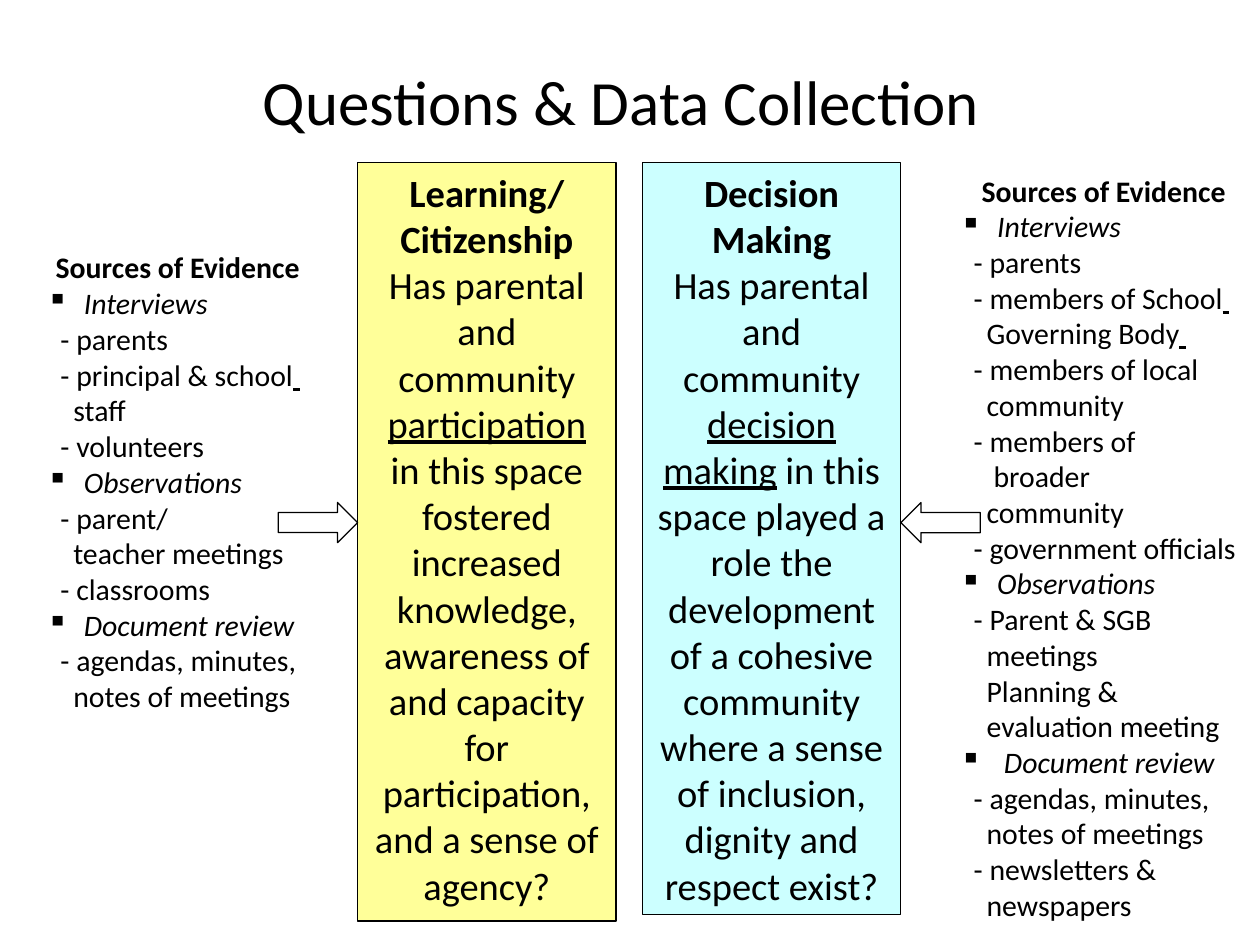
from collections import namedtuple

from lxml.etree import SubElement
from pptx import Presentation
from pptx.dml.color import RGBColor
from pptx.enum.shapes import MSO_SHAPE
from pptx.enum.text import MSO_ANCHOR, PP_ALIGN
from pptx.oxml.ns import qn
from pptx.util import Cm, Pt

BLACK = RGBColor(0, 0, 0)
YELLOW = RGBColor(0xFF, 0xFF, 0x99)
CYAN = RGBColor(0xCC, 0xFF, 0xFF)
FONT = "Calibri"

Box = namedtuple("Box", "left top width height")

ARROW_WIDTH, ARROW_HEIGHT, ARROW_DROP = 1.6, 0.81, 6.85
BULLET, WIDE_BULLET, DASH, MORE, DEEP = range(5)
INDENTS = {BULLET: 0.75, WIDE_BULLET: 0.89, DASH: 0.28, MORE: 0.54, DEEP: 0.68}

SCHOOL_SOURCES = [
    (BULLET, "Interviews"),
    (DASH, "- parents"),
    (DASH, "- principal & school", " "),
    (MORE, "staff"),
    (DASH, "- volunteers"),
    (BULLET, "Observations"),
    (DASH, "- parent/"),
    (MORE, "teacher meetings"),
    (DASH, "- classrooms"),
    (BULLET, "Document review"),
    (DASH, "- agendas, minutes,"),
    (MORE, "notes of meetings"),
]
GOVERNING_SOURCES = [
    (BULLET, "Interviews"),
    (DASH, "- parents"),
    (DASH, "- members of School", " "),
    (MORE, "Governing Body", " "),
    (DASH, "- members of local"),
    (MORE, "community"),
    (DASH, "- members of"),
    (DEEP, "broader"),
    (MORE, "community"),
    (DASH, "- government officials"),
    (BULLET, "Observations"),
    (DASH, "- Parent & SGB"),
    (MORE, "meetings"),
    (MORE, "Planning &"),
    (MORE, "evaluation meeting"),
    (WIDE_BULLET, "Document review"),
    (DASH, "- agendas, minutes,"),
    (MORE, "notes of meetings"),
    (DASH, "- newsletters &"),
    (MORE, "newspapers"),
]


def in_cm(box):
    return [Cm(value) for value in box]


def style(para, size, bold=False, italic=False, align=PP_ALIGN.LEFT):
    para.alignment = align
    font = para.font
    font.name, font.size, font.color.rgb = FONT, Pt(size), BLACK
    font.bold, font.italic = bold, italic


def next_para(frame, index):
    return frame.add_paragraph() if index else frame.paragraphs[0]


def add_spans(para, texts):
    for index, text in enumerate(texts):
        span = para.add_run()
        span.text = text
        if index == 1:
            span.font.underline = True


def indent(para, kind):
    properties = para._p.get_or_add_pPr()
    margin = Cm(INDENTS[kind])
    properties.set("marL", str(margin))
    if kind in (BULLET, WIDE_BULLET):
        properties.set("indent", str(-margin))
        SubElement(properties, qn("a:buChar")).set("char", "▪")


def add_title(page, box, text):
    title = page.shapes.title
    title.left, title.top, title.width, title.height = in_cm(box)
    title.text_frame.vertical_anchor = MSO_ANCHOR.MIDDLE
    para = title.text_frame.paragraphs[0]
    para.text = text
    style(para, 36, align=PP_ALIGN.CENTER)


def add_evidence(page, box, sources):
    frame = page.shapes.add_textbox(*in_cm(box)).text_frame
    frame.word_wrap = True
    heading = frame.paragraphs[0]
    heading.text = "Sources of Evidence"
    style(heading, 17, bold=True, align=PP_ALIGN.CENTER)
    for kind, *texts in sources:
        para = frame.add_paragraph()
        indent(para, kind)
        add_spans(para, texts)
        style(para, 17, italic=kind in (BULLET, WIDE_BULLET))


def add_outlined(page, preset, box):
    shape = page.shapes.add_shape(preset, *in_cm(box))
    shape.shadow.inherit = False
    shape.line.color.rgb = BLACK
    shape.line.width = Pt(0.75)
    return shape


def add_question(page, box, color, headings, question, arrow_on_left):
    panel = add_outlined(page, MSO_SHAPE.RECTANGLE, box)
    panel.fill.solid()
    panel.fill.fore_color.rgb = color
    frame = panel.text_frame
    frame.word_wrap = True
    frame.vertical_anchor = MSO_ANCHOR.TOP
    for index, texts in enumerate([[heading] for heading in headings] + [question]):
        para = next_para(frame, index)
        add_spans(para, texts)
        style(para, 22, bold=index < len(headings), align=PP_ALIGN.CENTER)

    arrow_left = box.left - ARROW_WIDTH if arrow_on_left else box.left + box.width
    arrow_box = Box(arrow_left, box.top + ARROW_DROP, ARROW_WIDTH, ARROW_HEIGHT)
    arrow = add_outlined(page, MSO_SHAPE.RIGHT_ARROW, arrow_box)
    arrow.fill.background()
    arrow.rotation = 0 if arrow_on_left else 180


def main():
    deck = Presentation()
    deck.slide_width, deck.slide_height = Cm(25.4), Cm(19.05)
    page = deck.slides.add_slide(deck.slide_layouts[5])
    add_title(page, Box(1.09, 1.12, 22.86, 1.8), "Questions & Data Collection")
    add_evidence(page, Box(0.69, 4.9, 5.79, 11.07), SCHOOL_SOURCES)
    add_question(
        page, Box(7.21, 3.28, 5.21, 15.29), YELLOW, ["Learning/", "Citizenship"],
        ["Has parental and community ", "participation",
         " in this space fostered increased knowledge, awareness of and "
         "capacity for participation, and a sense of agency?"],
        arrow_on_left=True)
    add_question(
        page, Box(12.95, 3.28, 5.21, 15.16), CYAN, ["Decision Making"],
        ["Has parental and community ", "decision making",
         " in this space played a role the development of a cohesive community "
         "where a sense of inclusion, dignity and respect exist?"],
        arrow_on_left=False)
    add_evidence(page, Box(19.1, 3.35, 6.3, 15.34), GOVERNING_SOURCES)
    deck.save("out.pptx")


if __name__ == "__main__":
    main()
